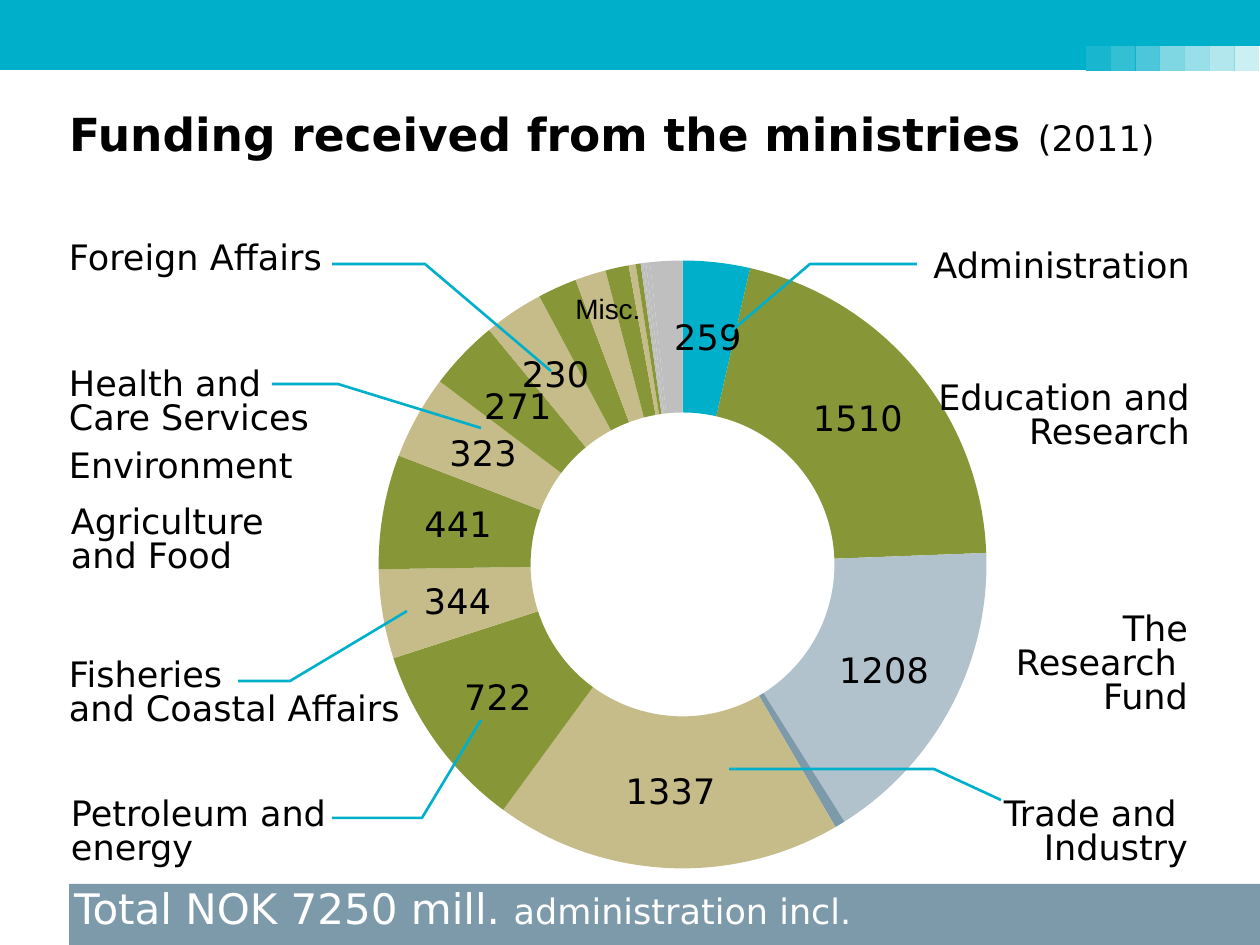
from dataclasses import dataclass
from lxml.etree import SubElement
from pptx import Presentation
from pptx.chart.data import CategoryChartData
from pptx.dml.color import RGBColor
from pptx.enum.chart import XL_CHART_TYPE
from pptx.enum.shapes import MSO_SHAPE
from pptx.enum.text import MSO_ANCHOR, MSO_AUTO_SIZE, PP_ALIGN
from pptx.oxml import parse_xml
from pptx.oxml.ns import nsdecls, qn
from pptx.util import Inches, Pt


@dataclass(frozen=True)
class Theme:
    font: str = "DejaVu Sans"
    small_font: str = "Arial"
    cyan: RGBColor = RGBColor(0x00, 0xB0, 0xCA)
    green: RGBColor = RGBColor(0x87, 0x96, 0x37)
    sand: RGBColor = RGBColor(0xC6, 0xBC, 0x89)
    mist: RGBColor = RGBColor(0xB1, 0xC2, 0xCC)
    slate: RGBColor = RGBColor(0x7D, 0x9A, 0xAA)
    grey: RGBColor = RGBColor(0xBF, 0xBF, 0xBF)
    black: RGBColor = RGBColor(0, 0, 0)
    white: RGBColor = RGBColor(255, 255, 255)
    title: int = 26
    total: int = 24
    body: int = 20
    misc: int = 16


theme = Theme()
PX = Inches(1) / 126


def px(*values):
    return [round(v * PX) for v in values]


def write(p, text, size, color=theme.black, bold=False, font=theme.font):
    for i, line in enumerate(text.split("\n")):
        if i:
            p.add_line_break()
        r = p.add_run()
        r.text = line
        r.font.name, r.font.size, r.font.bold = font, Pt(size), bold
        r.font.color.rgb = color


prs = Presentation()
prs.slide_width, prs.slide_height = px(1260, 945)
slide = prs.slides.add_slide(prs.slide_layouts[5])
shapes = slide.shapes

# Top banner with a notch at its right end
fb = shapes.build_freeform(0, 70, scale=PX)
fb.add_line_segments([(1086, 70), (1086, 46), (1260, 46), (1260, 0), (0, 0)])
sp = fb.convert_to_shape()
sp.shadow.inherit = False
sp.fill.solid()
sp.fill.fore_color.rgb = theme.cyan
sp.line.fill.background()

# Fading squares in the notch
for i, opacity in enumerate((90, 80, 70, 50, 40, 30, 20)):
    left = 1086 + round(i * 24.7)
    sp = shapes.add_shape(MSO_SHAPE.RECTANGLE, *px(left, 46, 25, 25))
    sp.shadow.inherit = False
    sp.fill.solid()
    sp.fill.fore_color.rgb = theme.cyan
    sp.line.fill.background()
    color = sp.fill._xPr.find(qn("a:solidFill"))[0]
    SubElement(color, qn("a:alpha"), val=str(opacity * 1000))

# Doughnut chart of funding per ministry
values = (259, 1510, 1208, 40, 1337, 722, 344, 441, 323, 271,
          230, 151, 119, 90, 27, 19, 10, 11, 15, 124)
colors = ([theme.cyan, theme.green, theme.mist, theme.slate]
          + [theme.sand, theme.green] * 6 + [theme.grey] * 4)
labelled = {0, 1, 2, *range(4, 11)}

data = CategoryChartData()
data.categories = [str(i + 1) for i in range(len(values))]
data.add_series("Series 1", values)
chart = shapes.add_chart(XL_CHART_TYPE.DOUGHNUT, *px(69, 253, 1147, 656), data).chart
chart.has_legend = False
chart.has_title = False
chart.font.name, chart.font.size = theme.font, Pt(theme.body)
chart.font.color.rgb = theme.black
plot = chart.plots[0]
plot.vary_by_categories = True
series = plot.series[0]
series.data_labels.show_value = False
for i, color in enumerate(colors):
    point = series.points[i]
    point.format.fill.solid()
    point.format.fill.fore_color.rgb = color
    point.format.line.fill.background()
    if i in labelled:
        font = point.data_label.font
        font.name, font.size = theme.font, Pt(theme.body)
        font.color.rgb = theme.black

# Hole size and plot position
area = chart._chartSpace.chart.plotArea
area.find(".//" + qn("c:holeSize")).set("val", "35")
for old in area.findall(qn("c:layout")):
    area.remove(old)
area.insert(0, parse_xml(
    f'<c:layout {nsdecls("c")}><c:manualLayout><c:layoutTarget val="inner"/>'
    '<c:xMode val="edge"/><c:yMode val="edge"/><c:x val="0.27"/><c:y val="0.01"/>'
    '<c:w val="0.53"/><c:h val="0.93"/></c:manualLayout></c:layout>'))

# Title
title = shapes.title
title.left, title.top, title.width, title.height = px(64, 101, 1150, 149)
tf = title.text_frame
tf.margin_left, tf.margin_top, tf.margin_right, tf.margin_bottom = px(5, 5, 5, 6)
tf.vertical_anchor = MSO_ANCHOR.TOP
tf.auto_size = MSO_AUTO_SIZE.NONE
p = tf.paragraphs[0]
p.alignment = PP_ALIGN.LEFT
write(p, "Funding received from the ministries ", theme.title, bold=True)
write(p, "(2011)", theme.body)

# Ministry names: text, box, alignment, line spacing
L, R = PP_ALIGN.LEFT, PP_ALIGN.RIGHT
labels = [
    ("Foreign Affairs", (69, 244, 314, 34), L, 0.8),
    ("Health and \nCare Services", (69, 370, 314, 67), L, 0.8),
    ("Environment", (69, 452, 314, 34), L, 0.8),
    ("Agriculture \nand Food", (71, 508, 481, 67), L, 0.8),
    ("Fisheries \nand Coastal Affairs", (69, 661, 451, 67), L, 0.8),
    ("Petroleum and energy", (71, 800, 268, 67), L, 0.8),
    ("Administration", (927, 243, 263, 42), R, 1.0),
    ("Education and Research", (927, 384, 263, 67), R, 0.8),
    ("The\n Research \nFund", (1000, 615, 188, 102), R, 0.8),
    ("Trade and \nIndustry", (968, 800, 220, 67), R, 0.8),
]
for text, box, align, spacing in labels:
    tf = shapes.add_textbox(*px(*box)).text_frame
    tf.margin_left = tf.margin_top = tf.margin_right = tf.margin_bottom = 0
    tf.word_wrap = True
    tf.auto_size = MSO_AUTO_SIZE.SHAPE_TO_FIT_TEXT
    p = tf.paragraphs[0]
    p.alignment, p.line_spacing = align, spacing
    write(p, text, theme.body)

# Leader lines from names to slices
leaders = [
    [(1001, 800), (934, 769), (729, 769)],
    [(332, 818), (422, 818), (481, 720)],
    [(238, 681), (290, 681), (407, 611)],
    [(917, 264), (810, 264), (729, 333)],
    [(272, 384), (338, 384), (481, 428)],
    [(332, 264), (425, 264), (551, 371)],
]
for start, *rest in leaders:
    fb = shapes.build_freeform(*start, scale=PX)
    fb.add_line_segments(rest, close=False)
    sp = fb.convert_to_shape()
    sp.shadow.inherit = False
    sp.fill.background()
    sp.line.color.rgb = theme.cyan
    sp.line.width = Pt(1.5)

# Total bar
sp = shapes.add_shape(MSO_SHAPE.RECTANGLE, *px(69, 884, 1193, 61))
sp.shadow.inherit = False
sp.fill.solid()
sp.fill.fore_color.rgb = theme.slate
sp.line.fill.background()
tf = sp.text_frame
tf.margin_left, tf.margin_top, tf.margin_right, tf.margin_bottom = px(5, 5, 5, 10)
tf.vertical_anchor = MSO_ANCHOR.MIDDLE
p = tf.paragraphs[0]
p.alignment, p.line_spacing = L, 0.8
write(p, "Total NOK 7250 mill. ", theme.total, theme.white)
write(p, "administration incl.", theme.body, theme.white)

# Label for the small slices
tf = shapes.add_textbox(*px(563, 285, 91, 46)).text_frame
tf.word_wrap = False
tf.auto_size = MSO_AUTO_SIZE.SHAPE_TO_FIT_TEXT
write(tf.paragraphs[0], "Misc.", theme.misc, font=theme.small_font)

prs.save("out.pptx")
